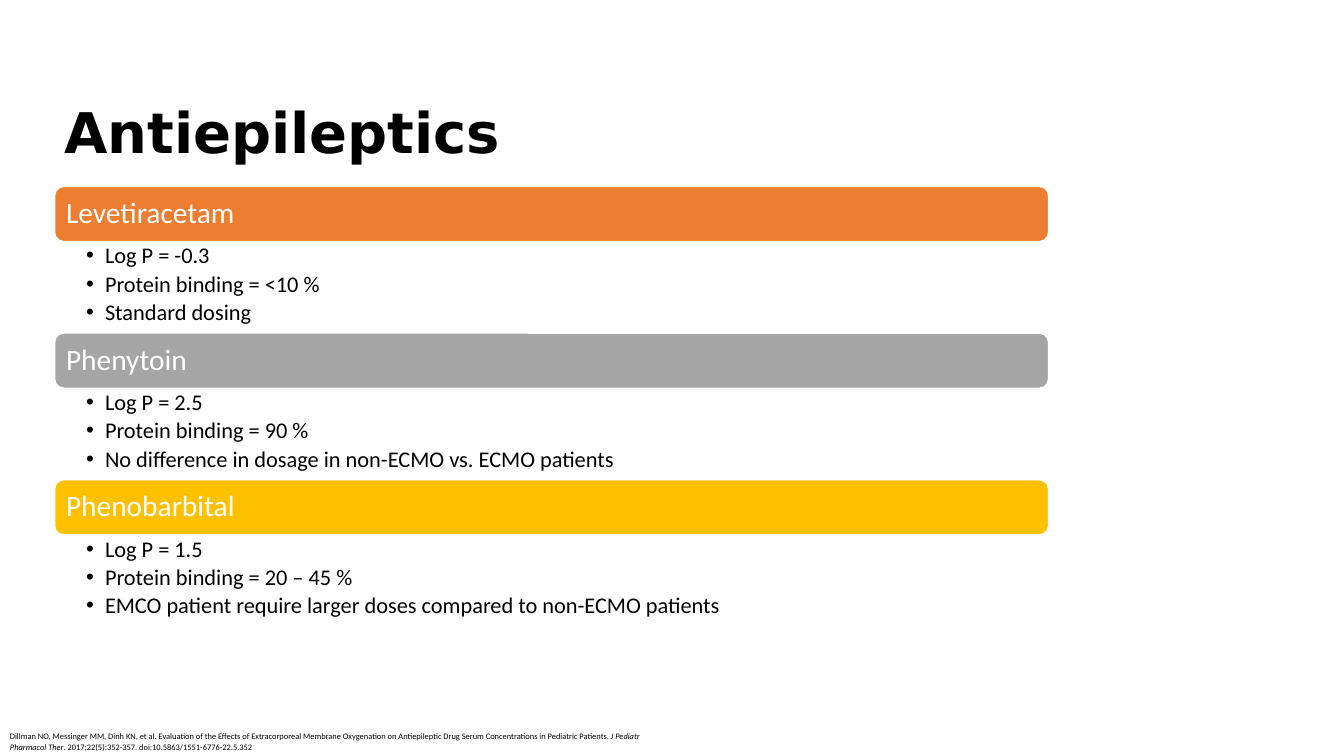
from dataclasses import dataclass

from lxml.etree import SubElement
from pptx import Presentation
from pptx.dml.color import RGBColor
from pptx.enum.shapes import MSO_SHAPE
from pptx.enum.text import MSO_ANCHOR, MSO_AUTO_SIZE, PP_ALIGN
from pptx.oxml.ns import qn
from pptx.util import Pt


@dataclass(frozen=True)
class Theme:
    text: RGBColor = RGBColor(0x00, 0x00, 0x00)
    light: RGBColor = RGBColor(0xFF, 0xFF, 0xFF)
    orange: RGBColor = RGBColor(0xED, 0x7D, 0x31)
    gray: RGBColor = RGBColor(0xA5, 0xA5, 0xA5)
    gold: RGBColor = RGBColor(0xFF, 0xC0, 0x00)
    title_font: str = "DejaVu Sans"
    body_font: str = "Calibri"
    title_size: int = 40
    drug_size: int = 21
    fact_size: int = 16
    citation_size: int = 6


theme = Theme()


def place(shape, left, top, width, height):
    shape.left, shape.top = Pt(left), Pt(top)
    shape.width, shape.height = Pt(width), Pt(height)


def style(font, name, size, color, bold=False):
    font.name, font.size, font.bold = name, Pt(size), bold
    font.color.rgb = color


LEFT, WIDTH = 39, 710
FIRST_TOP, PITCH = 133.2, 104.75
BAR_HEIGHT, FACTS_HEIGHT = 39.4, 65

prs = Presentation()
prs.slide_width, prs.slide_height = Pt(960), Pt(540)
slide = prs.slides.add_slide(prs.slide_layouts.get_by_name("Comparison"))
bodies = {p.placeholder_format.idx: p for p in slide.placeholders}

heading = slide.shapes.title
place(heading, LEFT, 71.3, 510.5, 51)
heading.text_frame.text = "Antiepileptics"
heading.text_frame.vertical_anchor = MSO_ANCHOR.MIDDLE
heading.text_frame.auto_size = MSO_AUTO_SIZE.NONE
heading_line = heading.text_frame.paragraphs[0]
heading_line.alignment = PP_ALIGN.LEFT
heading_line.line_spacing = 0.9
style(heading_line.runs[0].font, theme.title_font, theme.title_size, theme.text, True)

drugs = [
    ("Levetiracetam", theme.orange, 2,
     ["Log P = -0.3", "Protein binding = <10 %", "Standard dosing"]),
    ("Phenytoin", theme.gray, 4,
     ["Log P = 2.5", "Protein binding = 90 %",
      "No difference in dosage in non-ECMO vs. ECMO patients"]),
    ("Phenobarbital", theme.gold, 3,
     ["Log P = 1.5", "Protein binding = 20 – 45 %",
      "EMCO patient require larger doses compared to non-ECMO patients"]),
]

for row, (drug, color, body_idx, facts) in enumerate(drugs):
    top = FIRST_TOP + row * PITCH

    bar = slide.shapes.add_shape(
        MSO_SHAPE.ROUNDED_RECTANGLE, Pt(LEFT), Pt(top), Pt(WIDTH), Pt(BAR_HEIGHT))
    bar.shadow.inherit = False
    bar.fill.solid()
    bar.fill.fore_color.rgb = color
    bar.line.color.rgb = theme.light
    bar.line.width = Pt(1)
    bar.text_frame.text = drug
    bar.text_frame.margin_left = Pt(6.3)
    bar.text_frame.vertical_anchor = MSO_ANCHOR.MIDDLE
    drug_line = bar.text_frame.paragraphs[0]
    drug_line.alignment = PP_ALIGN.LEFT
    drug_line.line_spacing = 0.9
    style(drug_line.runs[0].font, theme.body_font, theme.drug_size, theme.light)

    fact_list = bodies[body_idx]
    place(fact_list, LEFT, top + BAR_HEIGHT, WIDTH, FACTS_HEIGHT)
    frame = fact_list.text_frame
    frame.text = "\n".join(facts)
    frame.auto_size = MSO_AUTO_SIZE.NONE
    frame.vertical_anchor = MSO_ANCHOR.TOP
    frame.margin_left, frame.margin_right = Pt(22.5), Pt(11.5)
    frame.margin_top = frame.margin_bottom = Pt(2)
    for fact in frame.paragraphs:
        fact.line_spacing = 0.9
        fact.space_before, fact.space_after = Pt(0), Pt(3)
        properties = fact._p.get_or_add_pPr()
        properties.set("marL", str(Pt(13.5)))
        properties.set("indent", str(-Pt(13.5)))
        SubElement(properties, qn("a:buFont"), typeface="Arial")
        SubElement(properties, qn("a:buChar"), char="•")
        style(fact.runs[0].font, theme.body_font, theme.fact_size, theme.text)

unused_body = bodies[1].element
unused_body.getparent().remove(unused_body)

citation = slide.shapes.add_textbox(Pt(0), Pt(519), Pt(480), Pt(21.6))
citation.text_frame.word_wrap = True
citation_line = citation.text_frame.paragraphs[0]
for words, italic in [
    ("Dillman NO, Messinger MM, Dinh KN, et al. Evaluation of the Effects of "
     "Extracorporeal Membrane Oxygenation on Antiepileptic Drug Serum "
     "Concentrations in Pediatric Patients. ", False),
    ("J Pediatr Pharmacol Ther", True),
    (". 2017;22(5):352-357. doi:10.5863/1551-6776-22.5.352", False),
]:
    part = citation_line.add_run()
    part.text = words
    style(part.font, theme.body_font, theme.citation_size, theme.text)
    part.font.italic = italic

prs.save("out.pptx")
